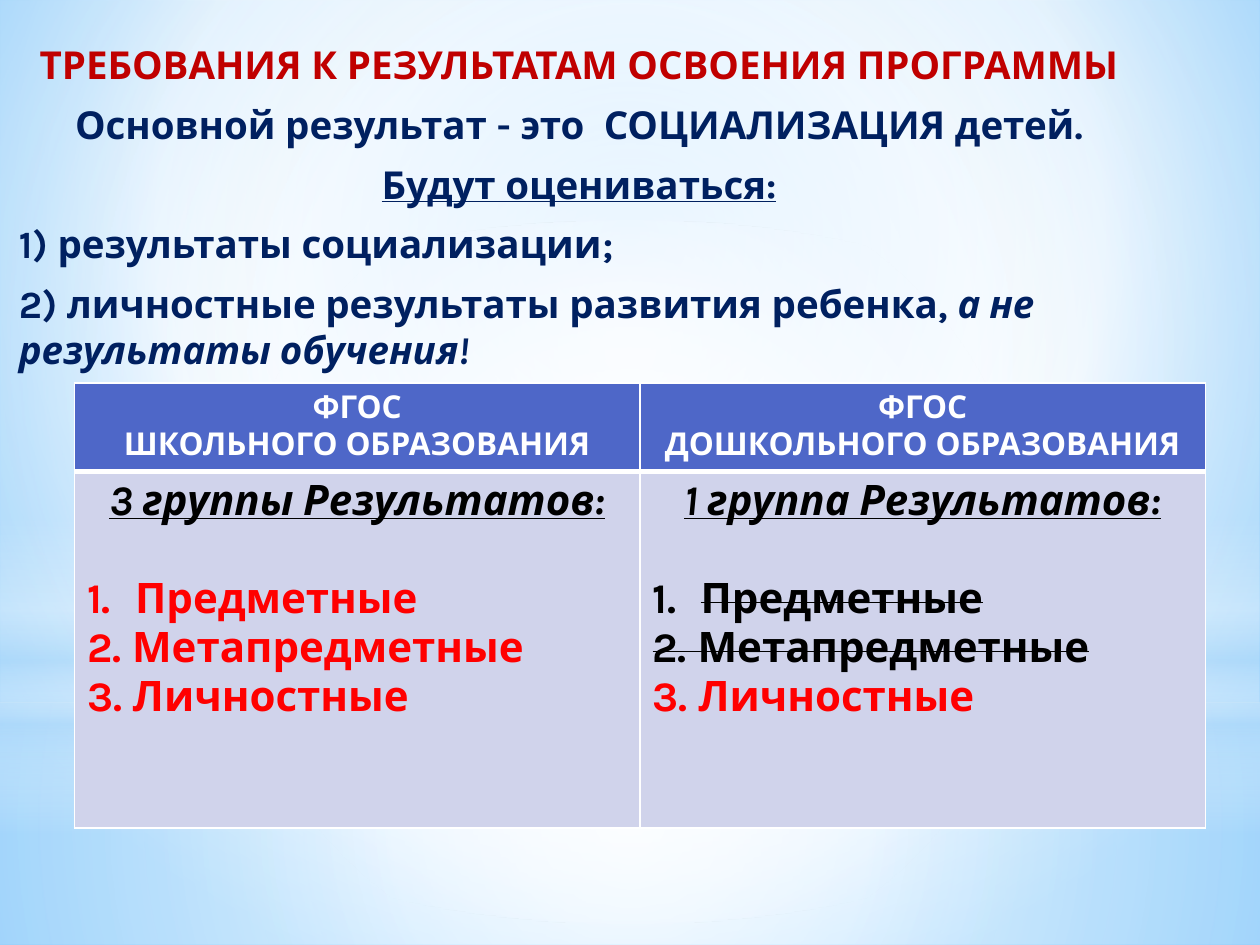
from lxml import etree
from pptx import Presentation
from pptx.dml.color import RGBColor
from pptx.enum import shapes, text
from pptx.oxml import ns
from pptx.util import Cm, Pt

THEME = {
    "font": "Karla", "lead": 22, "head": 18, "cell": 24,
    "title": "C00000", "navy": "002060", "white": "FFFFFF", "black": "000000",
    "red": "FF0000", "blue": "4E67C8", "pale": "D0D3EB", "sky": "B4DCFA",
}
MID = (50, 50, 50, 50)
BACK = ([(0, "9ED5FF", 100), (60, "FFFFFF", 100), (100, "5BB9FF", 100)], (20, 10, 20, 60))
W, S = THEME["white"], THEME["sky"]
GLOWS = [
    ("RECTANGLE", (0, 14.17, 25.4, 4.88), [(0, W, 91), (37, W, 76), (100, S, 79)], MID),
    ("RECTANGLE", (0, 0, 25.4, 14.17), [(0, W, 89), (48, W, 62), (100, S, 79)], MID),
    ("RECTANGLE", (0, 10.46, 25.4, 6.35),
     [(0, W, 0), (29, W, 30), (45, S, 40), (55, W, 26), (65, S, 60), (100, W, 0)], None),
    ("OVAL", (0, 4.45, 25.4, 14.17), [(0, W, 100), (56, W, 0)], MID),
]
LEAD = [
    ("c", "title", [("ТРЕБОВАНИЯ К РЕЗУЛЬТАТАМ ОСВОЕНИЯ ПРОГРАММЫ", "")]),
    ("c", "navy", [("Основной результат - это  СОЦИАЛИЗАЦИЯ детей.", "")]),
    ("c", "navy", [("Будут оцениваться:", "u")]),
    ("l", "navy", [("1) результаты социализации;", "")]),
    ("l", "navy", [("2) личностные результаты развития ребенка, ", ""),
                   ("а не результаты обучения!", "i")]),
]
HEADS = [["ФГОС", "ШКОЛЬНОГО ОБРАЗОВАНИЯ"], ["ФГОС", "ДОШКОЛЬНОГО ОБРАЗОВАНИЯ"]]
ITEMS = ["Предметные", "2. Метапредметные", "3. Личностные"]
GROUPS = [
    ("3 группы Результатов:", [("red", ""), ("red", ""), ("red", "")]),
    ("1 группа Результатов:", [("black", "s"), ("black", "s"), ("red", "")]),
]
LEAD_BOX = (0, 0.71, 23.22, 16.99)
GRID = (1.5, 7.72, 22.8, 8.92)
ROWS = (1.73, 7.19)


def place(box):
    return [Cm(n) for n in box]


def blend(fill, node, stops, rim):
    fill.gradient()
    grad = node.find(".//" + ns.qn("a:gradFill"))
    marks = "".join(
        f'<a:gs pos="{pos * 1000}"><a:srgbClr val="{hue}">'
        f'<a:alpha val="{alpha * 1000}"/></a:srgbClr></a:gs>'
        for pos, hue, alpha in stops)
    if rim:
        sides = " ".join(f'{k}="{n * 1000}"' for k, n in zip("ltrb", rim))
        tail = f'<a:path path="circle"><a:fillToRect {sides}/></a:path>'
    else:
        tail = '<a:lin ang="5400000" scaled="0"/>'
    new = etree.fromstring(
        f'<a:gradFill {ns.nsdecls("a")} rotWithShape="1">'
        f'<a:gsLst>{marks}</a:gsLst>{tail}</a:gradFill>')
    grad.getparent().replace(grad, new)


def write(frame, lines, size):
    for k, (side, hue, runs) in enumerate(lines):
        par = frame.paragraphs[0] if k == 0 else frame.add_paragraph()
        par.alignment = text.PP_ALIGN.CENTER if side == "c" else text.PP_ALIGN.LEFT
        font = par.font
        font.name, font.size, font.bold = THEME["font"], Pt(size), True
        font.color.rgb = RGBColor.from_string(THEME[hue])
        for words, marks in runs:
            run = par.add_run()
            run.text = words
            if "i" in marks:
                run.font.italic = True
            if "u" in marks:
                run.font.underline = True
            if "s" in marks:
                run.font._element.set("strike", "sngStrike")


def indent(par, left, hang=0):
    props = par._p.get_or_add_pPr()
    props.set("marL", str(Cm(left)))
    props.set("indent", str(-Cm(hang)))
    return props


def number(par):
    props = indent(par, 0.97, 0.97)
    mark = etree.Element(ns.qn("a:buAutoNum"), type="arabicPeriod")
    props.find(ns.qn("a:defRPr")).addprevious(mark)


def paint(cell, hue, base):
    props = cell._tc.get_or_add_tcPr()
    for side, width in (("L", 1), ("R", 1), ("T", 1), ("B", base)):
        edge = etree.SubElement(props, ns.qn("a:ln" + side), w=str(Pt(width)))
        fill = etree.SubElement(edge, ns.qn("a:solidFill"))
        etree.SubElement(fill, ns.qn("a:srgbClr"), val=THEME["white"])
    cell.fill.solid()
    cell.fill.fore_color.rgb = RGBColor.from_string(THEME[hue])


def main():
    deck = Presentation()
    deck.slide_width, deck.slide_height = Cm(25.4), Cm(19.05)
    slide = deck.slides.add_slide(deck.slide_layouts[6])
    blend(slide.background.fill, slide._element, *BACK)
    for kind, box, stops, rim in GLOWS:
        glow = slide.shapes.add_shape(shapes.MSO_SHAPE[kind], *place(box))
        glow.shadow.inherit = False
        glow.line.fill.background()
        blend(glow.fill, glow._element, stops, rim)

    lead = slide.shapes.add_textbox(*place(LEAD_BOX)).text_frame
    lead.word_wrap = True
    write(lead, LEAD, THEME["lead"])
    for par in lead.paragraphs:
        par.space_before, par.space_after = Pt(4.7), Pt(3)
        indent(par, 0.13)

    table = slide.shapes.add_table(2, 2, *place(GRID)).table
    for row, tall in zip(table.rows, ROWS):
        row.height = Cm(tall)
    for col, (head, (title, looks)) in enumerate(zip(HEADS, GROUPS)):
        table.columns[col].width = Cm(GRID[2] / 2)
        top, body = table.cell(0, col), table.cell(1, col)
        paint(top, "blue", 3)
        paint(body, "pale", 1)
        write(top.text_frame, [("c", "white", [(line, "")]) for line in head], THEME["head"])
        lines = [("c", "black", [(title, "iu")])]
        lines += [("l", hue, [(item, mark)]) for item, (hue, mark) in zip(ITEMS, looks)]
        write(body.text_frame, lines, THEME["cell"])
        first, second = body.text_frame.paragraphs[:2]
        first.space_after = Pt(28)
        number(second)

    deck.save("out.pptx")


if __name__ == "__main__":
    main()
